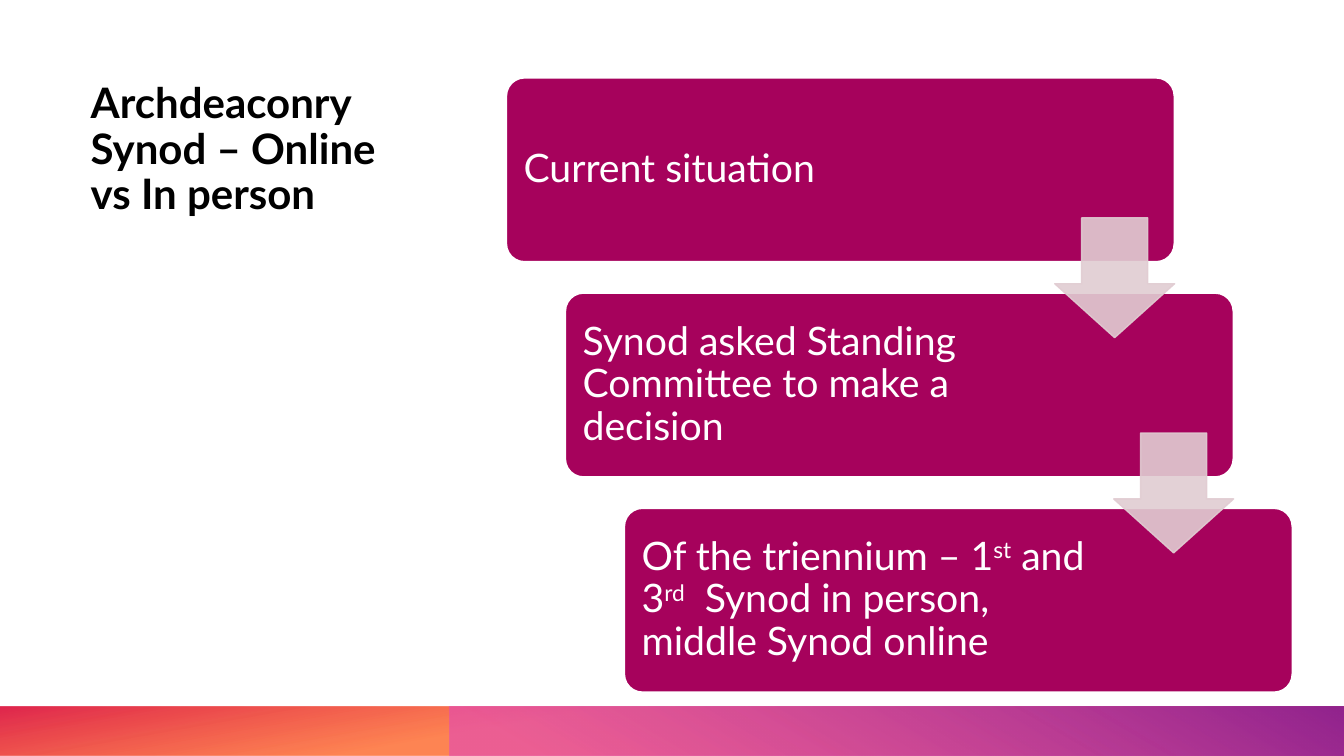
from lxml import etree
from pptx import Presentation
from pptx.dml.color import RGBColor
from pptx.enum.shapes import MSO_SHAPE
from pptx.enum.text import MSO_ANCHOR, MSO_AUTO_SIZE, PP_ALIGN
from pptx.oxml.ns import qn
from pptx.util import Inches, Pt

RECT = MSO_SHAPE.RECTANGLE
CARD = MSO_SHAPE.ROUNDED_RECTANGLE
ARROW = MSO_SHAPE.DOWN_ARROW
TOP, MIDDLE = MSO_ANCHOR.TOP, MSO_ANCHOR.MIDDLE
LEFT = PP_ALIGN.LEFT
NO_FIT = MSO_AUTO_SIZE.NONE

W, H = 13.33, 7.5
FONT = "Lato"
COLORS = {
    "title": "000000", "card": "A6025C", "white": "FFFFFF", "arrow": "E1CCD2",
    "orange": "FE4A00", "red": "DA002F", "pink": "E349BB", "purple": "92248E",
}
STEPS = [
    [("Current situation", 0)],
    [("Synod asked Standing Committee to make a decision", 0)],
    [("Of the triennium – 1", 0), ("st", 30), (" and 3", 0), ("rd", 30),
     ("  Synod in person, middle Synod online", 0)],
]


def rgb(name):
    return RGBColor.from_string(COLORS[name])


def add_alpha(clr, percent):
    etree.SubElement(clr, qn("a:alpha")).set("val", str(percent * 1000))


def write(tf, runs, size, color, bold=False, anchor=TOP, inset=(0.1, 0.05, 0.1, 0.05)):
    tf.word_wrap = True
    tf.auto_size = NO_FIT
    tf.vertical_anchor = anchor
    tf.margin_left, tf.margin_top, tf.margin_right, tf.margin_bottom = map(Inches, inset)
    p = tf.paragraphs[0]
    p.alignment = LEFT
    p.line_spacing = 0.9
    for text, raised in runs:
        r = p.add_run()
        r.text = text
        r.font.name, r.font.size, r.font.bold = FONT, Pt(size), bold
        r.font.color.rgb = rgb(color)
        if raised:
            r.font._element.set("baseline", str(raised * 1000))


def add_block(s, kind, box, adjustments=()):
    sp = s.shapes.add_shape(kind, *map(Inches, box))
    sp.shadow.inherit = False
    for i, value in enumerate(adjustments):
        sp.adjustments[i] = value
    return sp


def fill_and_line(sp, fill, line, width, alpha=None):
    sp.fill.solid()
    sp.fill.fore_color.rgb = rgb(fill)
    sp.line.color.rgb = rgb(line)
    sp.line.width = Pt(width)
    if alpha:
        for clr in sp._element.spPr.iter(qn("a:srgbClr")):
            add_alpha(clr, alpha)


def gradient_band(s, box, stops, angle, rotation=0):
    sp = add_block(s, RECT, box)
    sp.rotation = rotation
    sp.line.fill.background()
    spPr = sp._element.spPr
    spPr.find(qn("a:xfrm")).set("flipH", "1")
    grad = etree.Element(qn("a:gradFill"), rotWithShape="1")
    gs_list = etree.SubElement(grad, qn("a:gsLst"))
    for position, color, alpha in stops:
        gs = etree.SubElement(gs_list, qn("a:gs"), pos=str(position * 1000))
        clr = etree.SubElement(gs, qn("a:srgbClr"), val=COLORS[color])
        if alpha < 100:
            add_alpha(clr, alpha)
    etree.SubElement(grad, qn("a:lin"), ang=str(angle * 60000), scaled="0")
    spPr.find(qn("a:prstGeom")).addnext(grad)


def footer(s, x, y, w, h):
    gradient_band(s, (x, y, w, h), [(62, "orange", 67), (100, "red", 85)], 100, 180)
    split = w * 0.3345
    gradient_band(s, (x + split, y, w - split, h),
                  [(9, "pink", 62), (99, "purple", 100)], 240)


def heading(s, x, y, w, h):
    sp = s.shapes.title
    sp.left, sp.top, sp.width, sp.height = map(Inches, (x, y, w, h))
    write(sp.text_frame, [("Archdeaconry Synod – Online vs In person", 0)],
          30, "title", bold=True)


def staircase(s, x, y, w, h):
    card_w, card_h = w * 0.85, h * 0.3
    step_x, step_y = w * 0.075, h * 0.35
    side = card_h * 0.65
    corners = [(x + i * step_x, y + i * step_y) for i in range(len(STEPS))]
    for (left, top), runs in zip(corners, STEPS):
        sp = add_block(s, CARD, (left, top, card_w, card_h), [0.1])
        fill_and_line(sp, "card", "white", 1.5)
        write(sp.text_frame, runs, 28, "white", anchor=MIDDLE,
              inset=(0.12, 0.12, 1.89, 0.12))
    for left, top in corners[:-1]:
        box = (left + card_w - side, top + card_h * 0.76, side, side)
        sp = add_block(s, ARROW, box, [0.55, 0.45])
        fill_and_line(sp, "arrow", "arrow", 1, alpha=90)


def main():
    prs = Presentation()
    prs.slide_width, prs.slide_height = Inches(W), Inches(H)
    s = prs.slides.add_slide(prs.slide_layouts[5])
    footer(s, 0, H - 0.49, W, 0.49)
    heading(s, W * 0.06, 0.77, 3.19, 3.19)
    staircase(s, 5.02, 0.77, 7.8, 6.1)
    prs.save("out.pptx")


if __name__ == "__main__":
    main()
